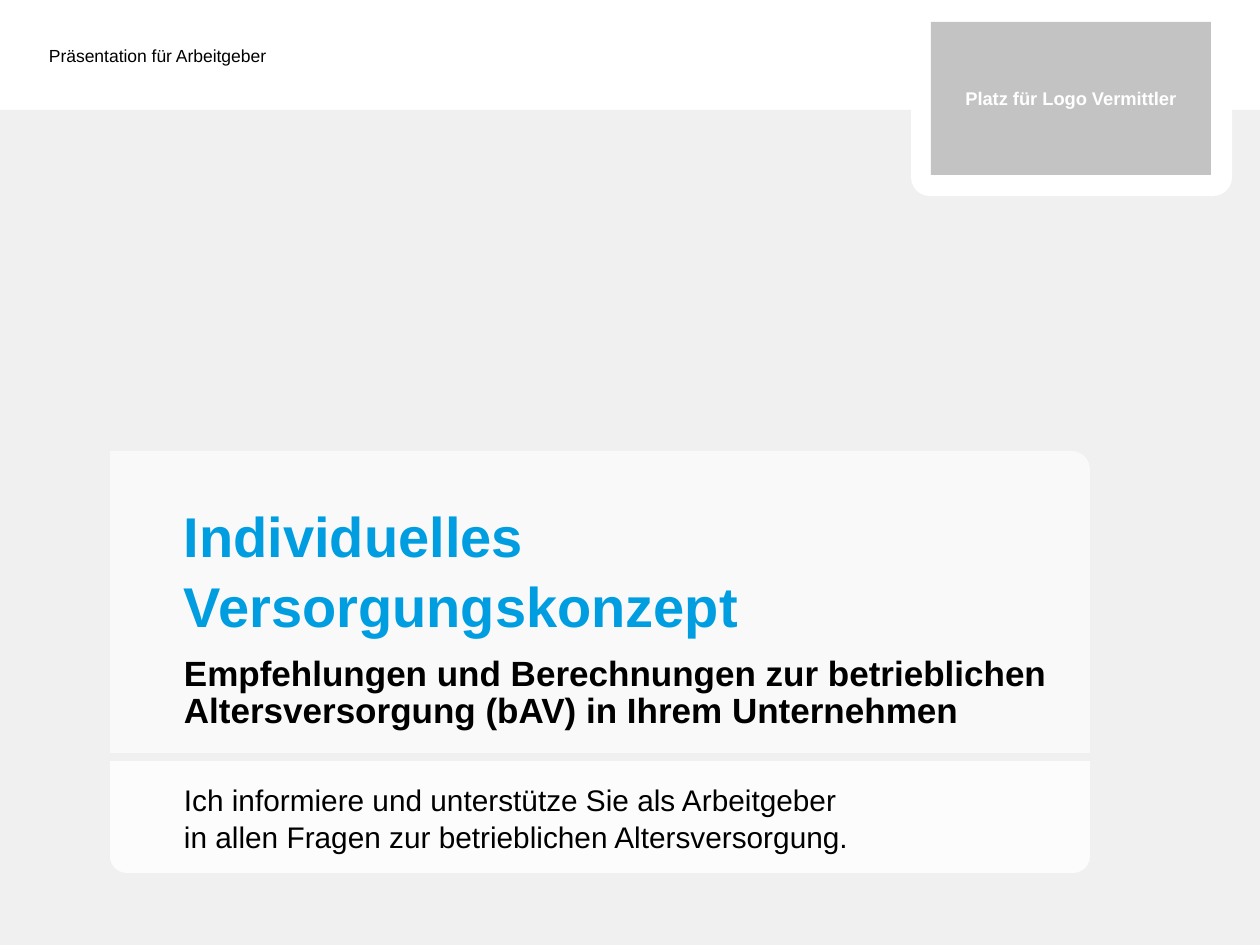
"""Build the title slide of an employer presentation on occupational pensions."""
from lxml.etree import SubElement
from pptx import Presentation
from pptx.dml.color import RGBColor
from pptx.enum.shapes import MSO_SHAPE as Shape
from pptx.enum.text import MSO_ANCHOR as Anchor, MSO_AUTO_SIZE as AutoSize, PP_ALIGN as Align
from pptx.oxml.ns import qn
from pptx.util import Inches, Pt

PX = Inches(10) / 1260


def add_panel(parent, preset, box, color, opacity=100, corners=()):
    panel = parent.add_shape(preset, *[round(v * PX) for v in box])
    panel.shadow.inherit = False
    panel.line.fill.background()
    panel.fill.solid()
    panel.fill.fore_color.rgb = RGBColor.from_string(color)
    for i, corner in enumerate(corners):
        panel.adjustments[i] = corner
    if opacity < 100:
        srgb = panel.element.spPr.find(qn("a:solidFill")).find(qn("a:srgbClr"))
        SubElement(srgb, qn("a:alpha")).set("val", str(opacity * 1000))
    return panel


def set_text(shape, text, size, color, bold=False, anchor=Anchor.MIDDLE,
             align=Align.LEFT, spacing=1.0, indent=0):
    frame = shape.text_frame
    frame.text = text
    frame.word_wrap = True
    frame.auto_size = AutoSize.NONE
    frame.vertical_anchor = anchor
    frame.margin_left = round(indent * PX)
    frame.margin_top = frame.margin_right = frame.margin_bottom = 0
    paragraph = frame.paragraphs[0]
    paragraph.alignment = align
    paragraph.line_spacing = spacing
    for run in paragraph.runs:
        run.font.name = "Arial"
        run.font.size = Pt(size)
        run.font.bold = bold
        run.font.color.rgb = RGBColor.from_string(color)


prs = Presentation()
prs.slide_width, prs.slide_height = round(1260 * PX), round(945 * PX)
slide = prs.slides.add_slide(prs.slide_layouts[5])
shapes = slide.shapes

add_panel(shapes, Shape.RECTANGLE, (0, 110, 1260, 835), "F0F0F0")
add_panel(shapes, Shape.ROUND_1_RECTANGLE, (110, 451, 980, 302), "FFFFFF", 60, [0.06])
add_panel(shapes, Shape.ROUND_2_SAME_RECTANGLE, (110, 761, 980, 112), "FFFFFF", 85, [0, 0.15])

title = shapes.title
title.element.getparent().append(title.element)
title.left, title.top, title.width, title.height = [round(v * PX) for v in (184, 498, 868, 137)]
set_text(title, "Individuelles Versorgungskonzept", 32, "009EE0", True, Anchor.TOP, spacing=1.05)

captions = [
    ((0, 0, 630, 111), "Präsentation für Arbeitgeber", 10, False, 1.0, 49),
    ((184, 761, 868, 112), "Ich informiere und unterstütze Sie als Arbeitgeber\v"
     "in allen Fragen zur betrieblichen Altersversorgung.", 17, False, 1.05, 0),
    ((184, 633, 868, 121), "Empfehlungen und Berechnungen zur betrieblichen "
     "Altersversorgung (bAV) in Ihrem Unternehmen", 20, True, Pt(21), 0),
]
for box, text, size, bold, spacing, indent in captions:
    caption = shapes.add_textbox(*[round(v * PX) for v in box])
    set_text(caption, text, size, "000000", bold, spacing=spacing, indent=indent)

logo_space = shapes.add_group_shape().shapes
add_panel(logo_space, Shape.ROUNDED_RECTANGLE, (911, 0, 321, 196), "FFFFFF", corners=[0.096])
logo_field = add_panel(logo_space, Shape.RECTANGLE, (931, 22, 280, 153), "C3C3C3")
set_text(logo_field, "Platz für Logo Vermittler", 10.5, "FFFFFF", True, align=Align.CENTER)

prs.save("out.pptx")
